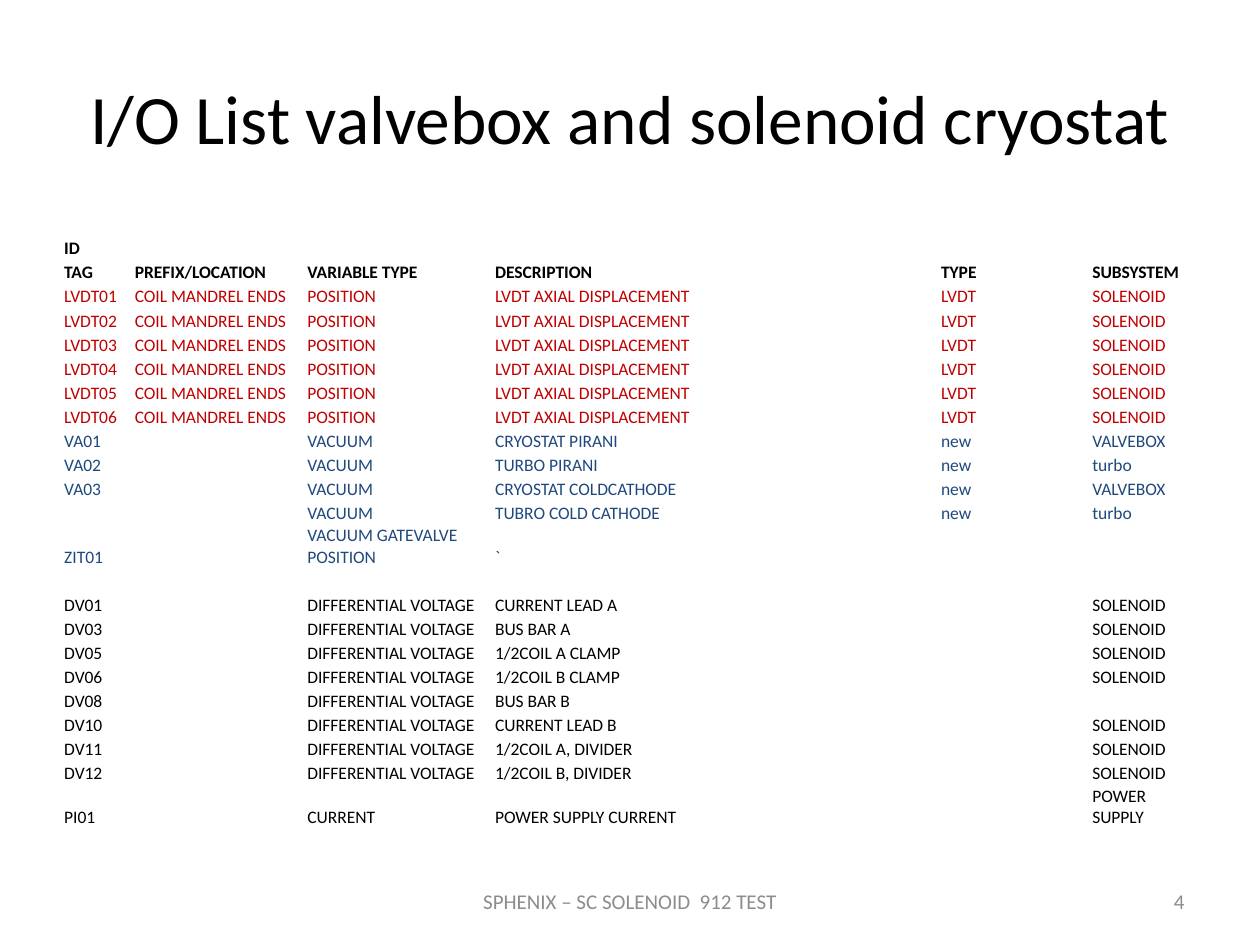
from lxml.etree import SubElement
from pptx import Presentation
from pptx.dml.color import RGBColor
from pptx.enum.text import MSO_ANCHOR, PP_ALIGN
from pptx.oxml.ns import qn
from pptx.util import Pt

BLACK = RGBColor(0x00, 0x00, 0x00)
RED = RGBColor(0xC0, 0x00, 0x00)
BLUE = RGBColor(0x1F, 0x49, 0x7D)
GRAY = RGBColor(0x8C, 0x8C, 0x8C)
FONT = "Calibri"
CELL_SIZE = 10

TITLE = "I/O List valvebox and solenoid cryostat"
FOOTER = "SPHENIX – SC SOLENOID  912 TEST"
PAGE_NUMBER = "4"

HEADER = [
    ("ID", "", "", "", "", ""),
    ("TAG", "PREFIX/LOCATION", "VARIABLE TYPE", "DESCRIPTION", "TYPE", "SUBSYSTEM"),
]
DISPLACEMENT = [
    (f"LVDT{number:02}", "COIL MANDREL ENDS", "POSITION",
     "LVDT AXIAL DISPLACEMENT", "LVDT", "SOLENOID")
    for number in range(1, 7)
]
VACUUM = [
    ("VA01", "", "VACUUM", "CRYOSTAT PIRANI", "new", "VALVEBOX"),
    ("VA02", "", "VACUUM", "TURBO PIRANI", "new", "turbo"),
    ("VA03", "", "VACUUM", "CRYOSTAT COLDCATHODE", "new", "VALVEBOX"),
    ("", "", "VACUUM", "TUBRO COLD CATHODE", "new", "turbo"),
    ("ZIT01", "", "VACUUM GATEVALVE POSITION", "`", "", ""),
    ("", "", "", "", "", ""),
]
VOLTAGE = [
    (tag, "", "DIFFERENTIAL VOLTAGE", description, "", subsystem)
    for tag, description, subsystem in [
        ("DV01", "CURRENT LEAD A", "SOLENOID"),
        ("DV03", "BUS BAR A", "SOLENOID"),
        ("DV05", "1/2COIL A CLAMP", "SOLENOID"),
        ("DV06", "1/2COIL B CLAMP", "SOLENOID"),
        ("DV08", "BUS BAR B", ""),
        ("DV10", "CURRENT LEAD B", "SOLENOID"),
        ("DV11", "1/2COIL A, DIVIDER", "SOLENOID"),
        ("DV12", "1/2COIL B, DIVIDER", "SOLENOID"),
    ]
]
CURRENT = [("PI01", "", "CURRENT", "POWER SUPPLY CURRENT", "", "POWER SUPPLY")]

# rows, colour, bold
GROUPS = [
    (HEADER, BLACK, True),
    (DISPLACEMENT, RED, False),
    (VACUUM, BLUE, False),
    (VOLTAGE + CURRENT, BLACK, False),
]
COLUMN_WIDTHS = [40.32, 98.64, 107.28, 254.88, 86.4, 60.48]
ROW_HEIGHT, TWO_LINE_HEIGHT = 13.72, 25.2
TWO_LINE_TAGS = {"ZIT01", "PI01"}
TABLE_LEFT, TABLE_TOP = 36, 134.64


def style(paragraph, size, color, bold=False):
    font = paragraph.font
    font.name, font.size, font.bold = FONT, Pt(size), bold
    font.color.rgb = color


def add_text(slide, text, box, size, color, align):
    frame = slide.shapes.add_textbox(*map(Pt, box)).text_frame
    frame.word_wrap = True
    frame.vertical_anchor = MSO_ANCHOR.MIDDLE
    paragraph = frame.paragraphs[0]
    paragraph.text = text
    paragraph.alignment = align
    style(paragraph, size, color)


def fill_cell(cell, text, color, bold):
    cell.fill.background()
    cell.vertical_anchor = MSO_ANCHOR.BOTTOM
    cell.margin_left = cell.margin_right = cell.margin_top = Pt(0.72)
    cell.margin_bottom = 0
    paragraph = cell.text_frame.paragraphs[0]
    paragraph.text = text
    style(paragraph, CELL_SIZE, color, bold)
    if not text:  # an empty cell takes its line height from the end mark
        SubElement(paragraph._p, qn("a:endParaRPr"), sz=str(CELL_SIZE * 100))


def add_io_table(slide):
    rows = [(row, color, bold) for group, color, bold in GROUPS for row in group]
    heights = [TWO_LINE_HEIGHT if row[0] in TWO_LINE_TAGS else ROW_HEIGHT
               for row, _, _ in rows]
    table = slide.shapes.add_table(
        len(rows), len(COLUMN_WIDTHS), Pt(TABLE_LEFT), Pt(TABLE_TOP),
        Pt(sum(COLUMN_WIDTHS)), Pt(sum(heights))).table
    table.first_row = table.horz_banding = False
    for column, width in zip(table.columns, COLUMN_WIDTHS):
        column.width = Pt(width)
    for table_row, height, (row, color, bold) in zip(table.rows, heights, rows):
        table_row.height = Pt(height)
        for cell, text in zip(table_row.cells, row):
            fill_cell(cell, text, color, bold)


def main():
    presentation = Presentation()
    presentation.slide_width, presentation.slide_height = Pt(720), Pt(540)
    slide = presentation.slides.add_slide(presentation.slide_layouts[6])
    add_text(slide, TITLE, (36, 21.6, 648, 90), 39.6, BLACK, PP_ALIGN.CENTER)
    add_text(slide, FOOTER, (246, 500.5, 228, 28.8), 12, GRAY, PP_ALIGN.CENTER)
    add_text(slide, PAGE_NUMBER, (516, 500.5, 168, 28.8), 12, GRAY, PP_ALIGN.RIGHT)
    add_io_table(slide)
    presentation.save("out.pptx")


if __name__ == "__main__":
    main()
